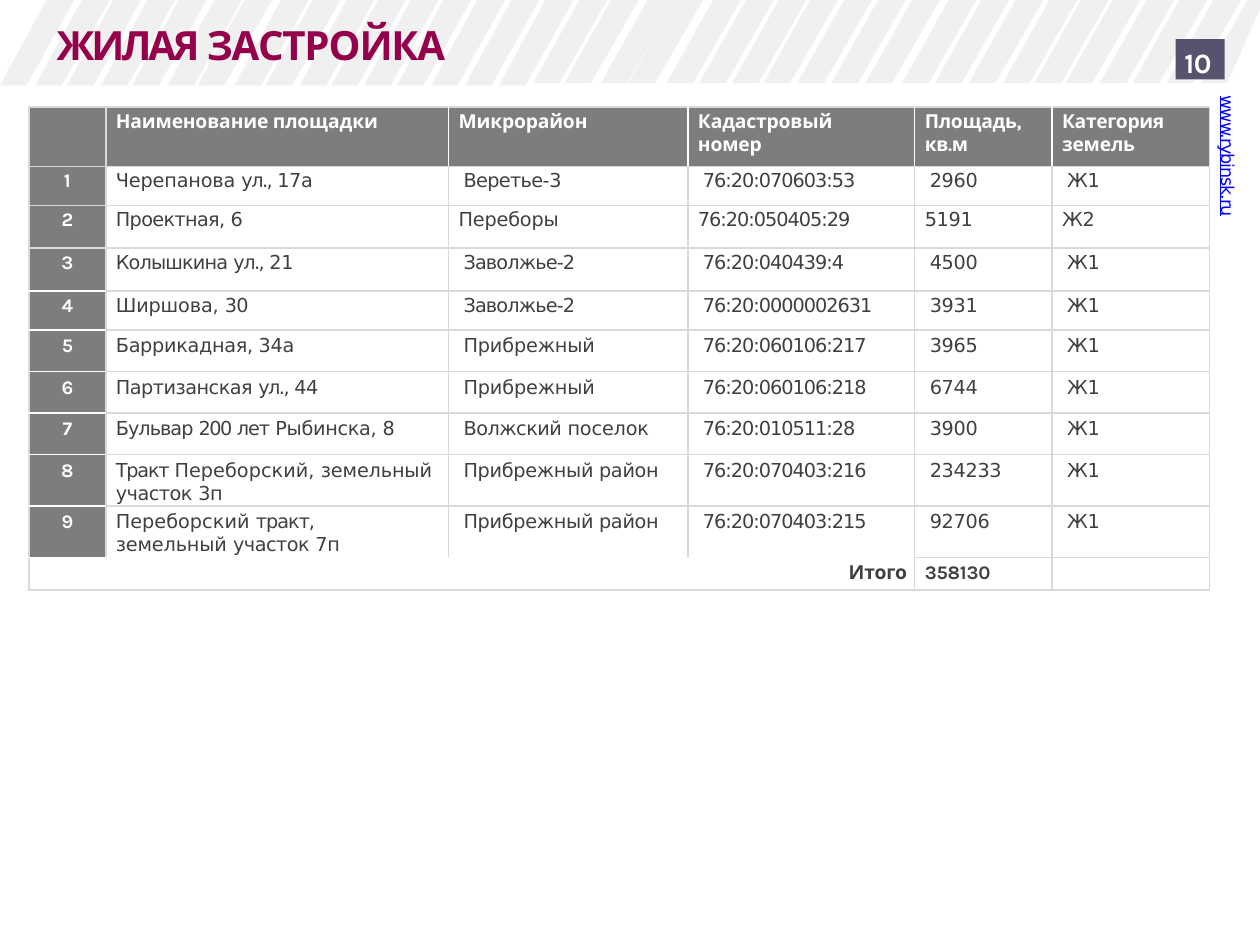
from dataclasses import dataclass
from typing import NamedTuple

from lxml.etree import SubElement
from pptx import Presentation
from pptx.dml.color import RGBColor
from pptx.enum.shapes import MSO_SHAPE
from pptx.enum.text import MSO_ANCHOR, PP_ALIGN
from pptx.oxml.ns import qn
from pptx.util import Inches, Pt

WHITE = RGBColor(0xFF, 0xFF, 0xFF)
STRIPE_GREY = RGBColor(0xF0, 0xF0, 0xF0)
RULE_GREY = RGBColor(0xD9, 0xD9, 0xD9)
HEADER_GREY = RGBColor(0x7D, 0x7D, 0x7D)
TEXT_GREY = RGBColor(0x40, 0x40, 0x40)
CRIMSON = RGBColor(0x94, 0x00, 0x49)
BADGE_VIOLET = RGBColor(0x55, 0x53, 0x6D)
LINK_BLUE = RGBColor(0x00, 0x00, 0xFF)

GRID_COLUMNS, GRID_ROWS = 100, 75
STRIPE_EDGES = (
    5.9, 8.7, 11.2, 13.9, 16.4, 19.2, 21.6, 24.5, 27, 29.7, 32.2, 34.8, 37.4, 40.1,
    42.8, 45.5, 48.2, 50.7, 53.6, 55.8, 58.8, 61.4, 64, 66.5, 69.2, 71.9, 74.6, 77.5,
    80.1, 82.8, 85.5, 88, 90.5, 93.2, 95.8, 98.5,
)
COLUMN_WIDTHS = (6.1, 27.2, 19, 18, 10.9, 12.5)
ROW_HEIGHTS = (4.7, 3.1, 3.4, 3.4, 3.1, 3.3, 3.3, 3.3, 4, 4, 2.6)
TOTAL_ROW = len(ROW_HEIGHTS) - 1
TOTAL_COLUMN = 4


class Place(NamedTuple):
    """Position and size in grid cells."""
    column: float
    row: float
    columns: float
    rows: float


class Span(NamedTuple):
    """A stretch of text with its letter spacing in points."""
    text: str
    spacing: float


class Style(NamedTuple):
    """Look of a piece of text."""
    font: str
    size: float
    color: RGBColor
    bold: bool = False
    underline: bool = False


@dataclass
class Plot:
    """One building plot of the table."""
    name: tuple
    district: tuple
    cadastre: str
    area: str
    category: str = "Ж1"
    indent: float = 1.2
    name_right: float = 0


HEADING = Style("Karla", 11, WHITE, True)
BODY = Style("DejaVu Sans", 11, TEXT_GREY)
TOTAL = Style("Karla", 11, TEXT_GREY, True)

STREET = Span("ул., ", -0.9)
ZAVOLZHYE = (Span("Заволжье-2", -0.5),)
COASTAL = (Span("Прибрежный", -0.1),)
COASTAL_AREA = (Span("Прибрежный район", -0.2),)
HEADERS = (
    (Span("Наименование площадки", -0.1),),
    (Span("Микрорайон", -0.1),),
    (Span("Кадастровый номер", -0.1),),
    (Span("Площадь, кв.м", -0.2),),
    (Span("Категория ", -0.2), Span("земель", -0.1)),
)
PLOTS = (
    Plot((Span("Черепанова ", -0.1), STREET, Span("17а", -0.2)),
         (Span("Веретье-", -0.4), Span("3", -0.5)), "76:20:070603:53", "2960"),
    Plot((Span("Проектная, ", -0.4), Span("6", -0.5)),
         (Span("Переборы", -0.1),), "76:20:050405:29", "5191", "Ж2", 0.8),
    Plot((Span("Колышкина ", -0.5), STREET, Span("21", -0.2)),
         ZAVOLZHYE, "76:20:040439:4", "4500"),
    Plot((Span("Ширшова, ", -0.1), Span("30", -0.3)),
         ZAVOLZHYE, "76:20:0000002631", "3931"),
    Plot((Span("Баррикадная, 34а", -0.2),), COASTAL, "76:20:060106:217", "3965"),
    Plot((Span("Партизанская ", -0.3), STREET, Span("44", -0.2)),
         COASTAL, "76:20:060106:218", "6744"),
    Plot((Span("Бульвар ", -0.6), Span("200 ", -0.9), Span("лет ", -0.6),
          Span("Рыбинска, ", -0.2), Span("8", -0.5)),
         (Span("Волжский ", -0.3), Span("поселок", -0.1)), "76:20:010511:28", "3900"),
    Plot((Span("Тракт ", -0.7), Span("Переборский, ", 0), Span("земельный ", -0.1),
          Span("участок ", -0.3), Span("3п", -0.2)),
         COASTAL_AREA, "76:20:070403:216", "234233"),
    Plot((Span("Переборский ", 0), Span("тракт, ", -0.6), Span("земельный ", -0.1),
          Span("участок ", -0.3), Span("7п", -0.2)),
         COASTAL_AREA, "76:20:070403:215", "92706", name_right=5),
)


def cells(count: float) -> int:
    """Turn a number of grid cells into a length."""
    return Inches(count * 10 / GRID_COLUMNS)


def write(frame, spans: tuple, style: Style, align=PP_ALIGN.LEFT) -> None:
    """Write spans into the first paragraph of a text frame."""
    para = frame.paragraphs[0]
    para.alignment = align
    for span in spans:
        run = para.add_run()
        run.text = span.text
        run.font.name = style.font
        run.font.size = Pt(style.size)
        run.font.bold = style.bold
        run.font.underline = style.underline
        run.font.color.rgb = style.color
        run.font._element.set("spc", str(round(span.spacing * 100)))


def fit_frame(frame, left: float, top: float) -> None:
    """Wrap a frame and set its insets in grid cells."""
    frame.word_wrap = True
    frame.vertical_anchor = MSO_ANCHOR.TOP
    frame.margin_left, frame.margin_top = cells(left), cells(top)
    frame.margin_right = frame.margin_bottom = 0


def add_text(page, place: Place, spans: tuple, style: Style, left: float = 0):
    """Add a text box and return its frame."""
    frame = page.shapes.add_textbox(*map(cells, place)).text_frame
    fit_frame(frame, left, 0.1)
    write(frame, spans, style)
    return frame


def add_stripes(page) -> None:
    """Draw the slanted stripes along the top edge as one shape."""
    contours = []
    for edge in STRIPE_EDGES:
        foot = 6.8 if edge < 46 else 6.6
        contours.append([(edge, 0), (edge - 2.2, 0), (edge - 5.9, foot), (edge - 3.8, foot)])
    contours.append([(100, 0), (99, 0), (95.3, 6.6), (97.4, 6.6), (100, 0.7)])
    builder = None
    for contour in contours:
        start, *rest = [(cells(x), cells(y)) for x, y in contour]
        if builder is None:
            builder = page.shapes.build_freeform(*start)
        else:
            builder.move_to(*start)
        builder.add_line_segments(rest, close=True)
    stripes = builder.convert_to_shape()
    stripes.shadow.inherit = False
    stripes.fill.solid()
    stripes.fill.fore_color.rgb = STRIPE_GREY
    stripes.line.fill.background()


def border_colors(row: int, column: int) -> dict:
    """Choose the colour of each side of a table cell."""
    sides = dict.fromkeys(("lnL", "lnR", "lnT", "lnB"), RULE_GREY)
    if row == 0:
        sides["lnL"] = WHITE if column > 1 else RULE_GREY
        sides["lnR"] = WHITE if 0 < column < 5 else RULE_GREY
    if (column == 0 and row > 3) or (row == TOTAL_ROW and column < TOTAL_COLUMN):
        sides["lnT"] = WHITE
    if (column == 0 and 3 <= row < TOTAL_ROW) or (row == TOTAL_ROW - 1 and column < TOTAL_COLUMN):
        sides["lnB"] = WHITE
    return sides


def style_cell(cell, row: int, column: int) -> None:
    """Give a table cell its borders, fill and insets."""
    cell.margin_left = cells(0.8 if column else 0)
    cell.margin_right = cell.margin_bottom = 0
    cell.margin_top = cells(0.3 if row < 5 else 0.4)
    cell.vertical_anchor = MSO_ANCHOR.TOP
    cell.text_frame.paragraphs[0]._p.get_or_add_endParaRPr().set("sz", "1100")
    properties = cell._tc.get_or_add_tcPr()
    for side, color in border_colors(row, column).items():
        line = SubElement(properties, qn(f"a:{side}"), w=str(Pt(1)))
        SubElement(SubElement(line, qn("a:solidFill")), qn("a:srgbClr"), val=str(color))
    if row == 0 or (column == 0 and row < TOTAL_ROW):
        cell.fill.solid()
        cell.fill.fore_color.rgb = HEADER_GREY
    else:
        cell.fill.background()


def add_plots(page) -> None:
    """Build the table of plots with its header and total."""
    place = Place(2.3, 8.5, sum(COLUMN_WIDTHS), sum(ROW_HEIGHTS))
    table = page.shapes.add_table(
        len(ROW_HEIGHTS), len(COLUMN_WIDTHS), *map(cells, place)).table
    table.first_row = table.horz_banding = False
    for column, width in zip(table.columns, COLUMN_WIDTHS):
        column.width = cells(width)
    for row, height in zip(table.rows, ROW_HEIGHTS):
        row.height = cells(height)
    for row in range(len(ROW_HEIGHTS)):
        for column in range(len(COLUMN_WIDTHS)):
            style_cell(table.cell(row, column), row, column)
    for column, header in enumerate(HEADERS, 1):
        write(table.cell(0, column).text_frame, header, HEADING)
    table.cell(0, 3).margin_right = cells(3)
    for row, plot in enumerate(PLOTS, 1):
        write(table.cell(row, 0).text_frame, (Span(str(row), -0.5),), HEADING, PP_ALIGN.CENTER)
        values = (plot.name, plot.district, (Span(plot.cadastre, -0.6),),
                  (Span(plot.area, -0.2),), (Span(plot.category, -0.2),))
        for column, spans in enumerate(values, 1):
            cell = table.cell(row, column)
            write(cell.text_frame, spans, BODY)
            if column > 1:
                cell.margin_left = cells(plot.indent)
        table.cell(row, 1).margin_right = cells(plot.name_right)
    label = table.cell(TOTAL_ROW, 0)
    label.merge(table.cell(TOTAL_ROW, TOTAL_COLUMN - 1))
    label.margin_right = cells(0.6)
    write(label.text_frame, (Span("Итого", -0.1),), TOTAL, PP_ALIGN.RIGHT)
    write(table.cell(TOTAL_ROW, TOTAL_COLUMN).text_frame, (Span("358130", -0.1),), TOTAL)


def add_badge(page) -> None:
    """Draw the page number badge."""
    badge = page.shapes.add_shape(MSO_SHAPE.RECTANGLE, *map(cells, Place(93.3, 3.1, 3.9, 3.2)))
    badge.shadow.inherit = False
    badge.fill.solid()
    badge.fill.fore_color.rgb = BADGE_VIOLET
    badge.line.fill.background()
    fit_frame(badge.text_frame, 0.7, 0.5)
    write(badge.text_frame, (Span("10", -0.2),), Style("Karla", 16, WHITE, True))


def main() -> None:
    """Build and save the deck."""
    deck = Presentation()
    deck.slide_width, deck.slide_height = cells(GRID_COLUMNS), cells(GRID_ROWS)
    page = deck.slides.add_slide(deck.slide_layouts[6])
    add_stripes(page)
    address = add_text(page, Place(96.3, 7.5, 2, 10.2), (Span("www.rybinsk.ru", -0.6),),
                       Style("DejaVu Sans", 10, LINK_BLUE, underline=True))
    address._txBody.bodyPr.set("vert", "vert")
    add_text(page, Place(3.6, 1.5, 70.8, 6.4), (Span("ЖИЛАЯ ", -1.8), Span("ЗАСТРОЙКА", -0.7)),
             Style("Karla", 23, CRIMSON, True), 0.9)
    add_plots(page)
    add_badge(page)
    deck.save("out.pptx")


if __name__ == "__main__":
    main()
